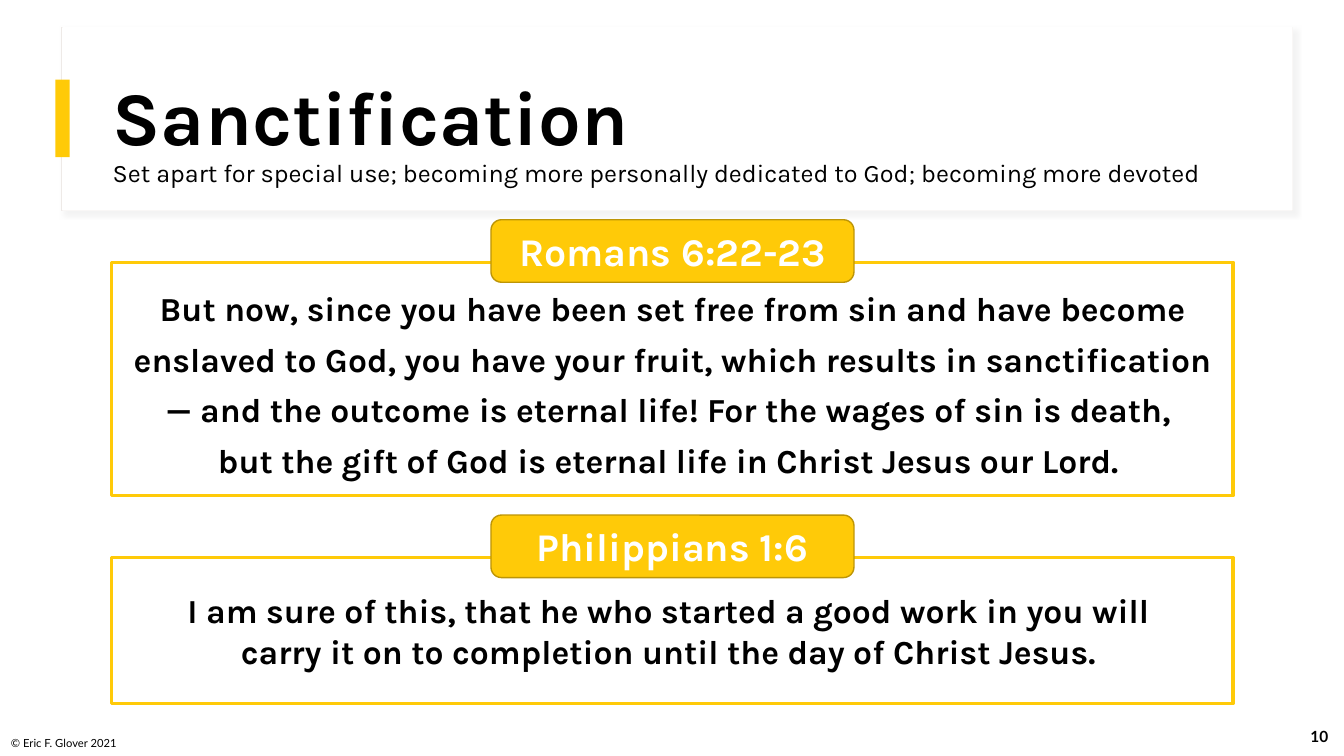
from lxml import etree
from pptx import Presentation
from pptx.dml.color import RGBColor
from pptx.enum import shapes, text
from pptx.oxml import ns
from pptx.util import Inches, Pt

COLORS = {
    "white": "FFFFFF",
    "black": "000000",
    "gold": "FFCA08",
    "dark gold": "BD9506",
    "frame": "EEEAE7",
    "shadow": "D9D9D9",
}
RECTANGLE = shapes.MSO_SHAPE.RECTANGLE
ROUNDED = shapes.MSO_SHAPE.ROUNDED_RECTANGLE
CENTER = text.PP_ALIGN.CENTER
MIDDLE = text.MSO_ANCHOR.MIDDLE


def rgb(name):
    return RGBColor.from_string(COLORS[name])


def write(shape, content, size, font="Karla", color="black", bold=False,
          align=text.PP_ALIGN.LEFT, anchor=MIDDLE, margins=(0.1, 0.05),
          line_spacing=None, space_before=None, space_after=None):
    """Fill a shape with one formatted paragraph; margins are (side, top and bottom)."""
    frame = shape.text_frame
    frame.word_wrap = True
    frame.vertical_anchor = anchor
    frame.margin_left = frame.margin_right = Inches(margins[0])
    frame.margin_top = frame.margin_bottom = Inches(margins[1])
    paragraph = frame.paragraphs[0]
    paragraph.text = content
    paragraph.alignment = align
    paragraph.line_spacing = line_spacing
    paragraph.space_before = space_before
    paragraph.space_after = space_after
    for run in paragraph.runs:
        run.font.name = font
        run.font.size = Pt(size)
        run.font.bold = bold
        run.font.color.rgb = rgb(color)


def add_text(slide, left, top, width, height, content, size, **style):
    box = slide.shapes.add_textbox(Inches(left), Inches(top), Inches(width), Inches(height))
    write(box, content, size, **style)
    return box


def add_box(slide, left, top, width, height, kind=RECTANGLE, fill=None, line=None, weight=1):
    shape = slide.shapes.add_shape(
        kind, Inches(left), Inches(top), Inches(width), Inches(height))
    shape.shadow.inherit = False
    if fill:
        shape.fill.solid()
        shape.fill.fore_color.rgb = rgb(fill)
    else:
        shape.fill.background()
    if line:
        shape.line.color.rgb = rgb(line)
        shape.line.width = Pt(weight)
    else:
        shape.line.fill.background()
    return shape


def add_soft_shadow(shape):
    effects = shape._element.spPr.find(ns.qn("a:effectLst"))
    shadow = etree.SubElement(
        effects, ns.qn("a:outerShdw"), blurRad=str(Pt(4)), dist=str(Pt(3)),
        dir=str(45 * 60000), algn="tl", rotWithShape="0")
    color = etree.SubElement(shadow, ns.qn("a:srgbClr"), val=COLORS["shadow"])
    etree.SubElement(color, ns.qn("a:alpha"), val="30000")


def add_header(slide, left, top, width, height, title, subtitle):
    frame = add_box(slide, left, top, width, height,
                    fill="white", line="frame", weight=0.75)
    add_soft_shadow(frame)
    add_box(slide, left + 0.01, top, width - 0.01, height, fill="white")
    add_box(slide, left - 0.06, top + 0.52, 0.14, 0.77, fill="gold")
    add_text(slide, left + 0.41, top + 0.29, 11.12, 1.29, title, 54,
             bold=True, line_spacing=0.9)
    add_text(slide, left + 0.41, top + 1.24, 11.57, 0.4, subtitle, 18,
             anchor=text.MSO_ANCHOR.TOP)


def add_verse(slide, left, top, width, height, reference, verse, **spacing):
    """Draw an outlined verse with its reference on a tab across the top edge."""
    tab_width, tab_height = 3.6, 0.62
    panel = add_box(slide, left, top, width, height, line="gold", weight=2.25)
    write(panel, verse, 24, bold=True, align=CENTER, margins=(0.1, 0), **spacing)
    tab = add_box(slide, left + (width - tab_width) / 2, top - 0.42, tab_width, tab_height,
                  kind=ROUNDED, fill="gold", line="dark gold")
    write(tab, reference, 28, color="white", bold=True, align=CENTER)


def add_footer(slide, left, top, width, height, credit, number):
    add_text(slide, left, top + 0.1, 1.57, height - 0.12, credit, 8,
             font="Lato", anchor=text.MSO_ANCHOR.BOTTOM)
    add_text(slide, left + width - 0.49, top, 0.49, height, number, 11,
             font="Lato", bold=True, align=CENTER, space_after=Pt(6))


def main():
    presentation = Presentation()
    presentation.slide_width = Inches(13.33)
    presentation.slide_height = Inches(7.5)
    slide = presentation.slides.add_slide(presentation.slide_layouts[6])

    add_footer(slide, 0.01, 7.11, 13.32, 0.4, "© Eric F. Glover 2021", "10")
    add_header(
        slide, 0.61, 0.27, 12.21, 1.82, "Sanctification",
        "Set apart for special use; becoming more personally dedicated to God; "
        "becoming more devoted")
    add_verse(
        slide, 1.11, 2.6, 11.12, 2.32, "Romans 6:22-23",
        "But now, since you have been set free from sin and have become enslaved to God, "
        "you have your fruit, which results in sanctification — and the outcome is "
        "eternal life! For the wages of sin is death, \n"
        "but the gift of God is eternal life in Christ Jesus our Lord. ",
        line_spacing=1.25)
    add_verse(
        slide, 1.11, 5.53, 11.12, 1.45, "Philippians 1:6",
        "I am sure of this, that he who started a good work in you will \n"
        "carry it on to completion until the day of Christ Jesus. ",
        space_before=Pt(10))

    presentation.save("out.pptx")


if __name__ == "__main__":
    main()
